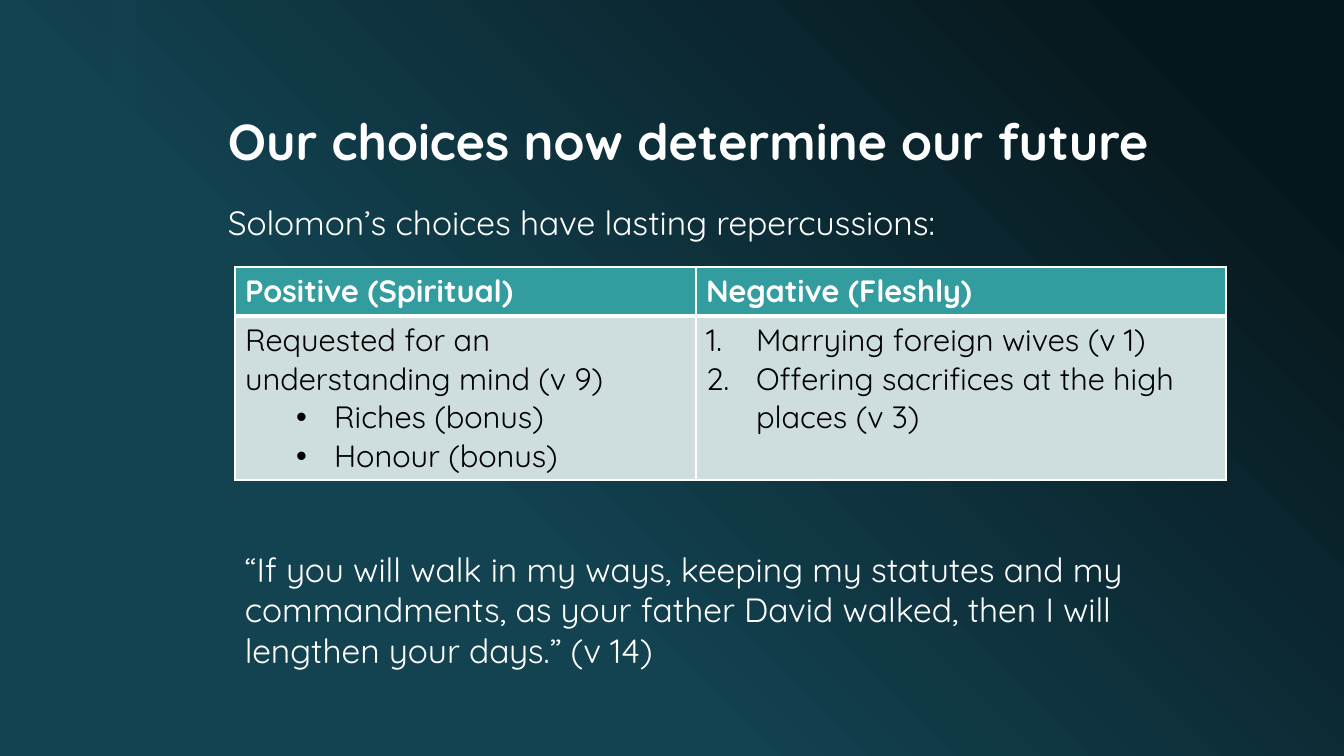
from copy import deepcopy

from lxml.etree import SubElement
from pptx import Presentation
from pptx.dml.color import RGBColor
from pptx.enum.shapes import MSO_SHAPE
from pptx.enum.text import MSO_ANCHOR
from pptx.oxml.ns import qn
from pptx.util import Pt

PX = 9525 * 96 / 100.8
FONT = "Quicksand"
WHITE, BLACK, TEAL, DEEP, NIGHT, PALE = "FFFFFF", "000000", "339C9F", "134251", "06171C", "CEDEDF"

SLIDE_SIZE = (1344, 756)
GRADIENT = [(0.10, NIGHT), (0.65, DEEP), (1, DEEP)]
STRIPE = (111, 0, 25, 756)

TEXTS = [
    {"box": (218, 42, 1008, 134), "anchor": MSO_ANCHOR.BOTTOM, "spacing": 0.9,
     "text": "Our choices now determine our future", "size": 36, "bold": True},
    {"box": (218, 202, 1025, 60), "anchor": MSO_ANCHOR.TOP, "spacing": 0.9,
     "text": "Solomon’s choices have lasting repercussions:", "size": 24, "bold": False},
    {"box": (235, 544, 991, 173), "anchor": MSO_ANCHOR.TOP, "spacing": 1.0,
     "text": "“If you will walk in my ways, keeping my statutes and my commandments, as your "
             "father David walked, then I will lengthen your days.” (v 14)",
     "size": 24, "bold": False},
]

TABLE_LEFT, TABLE_TOP = 235, 267
COLUMN_WIDTHS = [461, 530]
ROW_HEIGHTS = [49, 164]
CHOICES = [
    [[("Positive (Spiritual)", None)], [("Negative (Fleshly)", None)]],
    [
        [("Requested for an understanding mind (v 9)", None),
         ("Riches (bonus)", "bullet"), ("Honour (bonus)", "bullet")],
        [("Marrying foreign wives (v 1)", "number"),
         ("Offering sacrifices at the high places (v 3)", "number")],
    ],
]
ROW_STYLES = [
    {"fill": TEAL, "color": WHITE, "bold": True, "bottom": 3},
    {"fill": PALE, "color": BLACK, "bold": False, "bottom": 1},
]
# margin and hanging indent in px, marker tag, marker attributes
LISTS = {
    "bullet": (89, 38, "a:buChar", {"char": "•"}),
    "number": (50, 50, "a:buAutoNum", {"type": "arabicPeriod"}),
}


def emu(pixels):
    return round(pixels * PX)


def rgb(color):
    return RGBColor.from_string(color)


def write(paragraph, text, color, **formats):
    run = paragraph.add_run()
    run.text = text
    run.font.color.rgb = rgb(color)
    for name, value in {"name": FONT, **formats}.items():
        setattr(run.font, name, value)


def paint_background(slide):
    fill = slide.background.fill
    fill.gradient()
    fill.gradient_angle = 225
    stops = slide.background._cSld.find(".//" + qn("a:gsLst"))
    stops.append(deepcopy(stops[-1]))
    for stop, (position, color) in zip(fill.gradient_stops, GRADIENT):
        stop.position = position
        stop.color.rgb = rgb(color)


def add_stripe(slide):
    stripe = slide.shapes.add_shape(MSO_SHAPE.RECTANGLE, *map(emu, STRIPE))
    stripe.shadow.inherit = False
    stripe.line.fill.background()
    stripe.fill.solid()
    stripe.fill.fore_color.rgb = rgb(DEEP)
    color = stripe._element.spPr.find(".//" + qn("a:srgbClr"))
    SubElement(color, qn("a:alpha"), val="60000")


def add_text(slide, item):
    frame = slide.shapes.add_textbox(*map(emu, item["box"])).text_frame
    frame.word_wrap = True
    frame.vertical_anchor = item["anchor"]
    paragraph = frame.paragraphs[0]
    paragraph.line_spacing = item["spacing"]
    write(paragraph, item["text"], WHITE, size=Pt(item["size"]), bold=item["bold"])


def add_marker(paragraph, kind):
    margin, hanging, tag, attributes = LISTS[kind]
    properties = paragraph._p.get_or_add_pPr()
    properties.set("marL", str(emu(margin)))
    properties.set("indent", str(-emu(hanging)))
    if kind == "bullet":
        SubElement(properties, qn("a:buFont"), typeface="Arial")
    SubElement(properties, qn(tag), attributes)


def add_borders(cell, widths):
    properties = cell._tc.get_or_add_tcPr()
    for side, width in widths.items():
        line = SubElement(properties, qn("a:ln" + side), w=str(Pt(width)))
        fill = SubElement(line, qn("a:solidFill"))
        SubElement(fill, qn("a:srgbClr"), val=WHITE)


def fill_cell(cell, lines, style, top):
    add_borders(cell, {"L": 1, "R": 1, "T": top, "B": style["bottom"]})
    cell.fill.solid()
    cell.fill.fore_color.rgb = rgb(style["fill"])
    frame = cell.text_frame
    for index, (text, kind) in enumerate(lines):
        paragraph = frame.add_paragraph() if index else frame.paragraphs[0]
        if kind:
            add_marker(paragraph, kind)
        write(paragraph, text, style["color"], size=Pt(22), bold=style["bold"])


def add_choices(slide):
    sizes = (TABLE_LEFT, TABLE_TOP, sum(COLUMN_WIDTHS), sum(ROW_HEIGHTS))
    table = slide.shapes.add_table(
        len(ROW_HEIGHTS), len(COLUMN_WIDTHS), *map(emu, sizes)).table
    table.horz_banding = False
    for column, width in zip(table.columns, COLUMN_WIDTHS):
        column.width = emu(width)
    top = 1
    for row, height, cells, style in zip(table.rows, ROW_HEIGHTS, CHOICES, ROW_STYLES):
        row.height = emu(height)
        for cell, lines in zip(row.cells, cells):
            fill_cell(cell, lines, style, top)
        top = style["bottom"]


def main():
    presentation = Presentation()
    presentation.slide_width, presentation.slide_height = map(emu, SLIDE_SIZE)
    slide = presentation.slides.add_slide(presentation.slide_layouts[6])
    paint_background(slide)
    add_stripe(slide)
    for item in TEXTS:
        add_text(slide, item)
    add_choices(slide)
    presentation.save("out.pptx")


if __name__ == "__main__":
    main()
